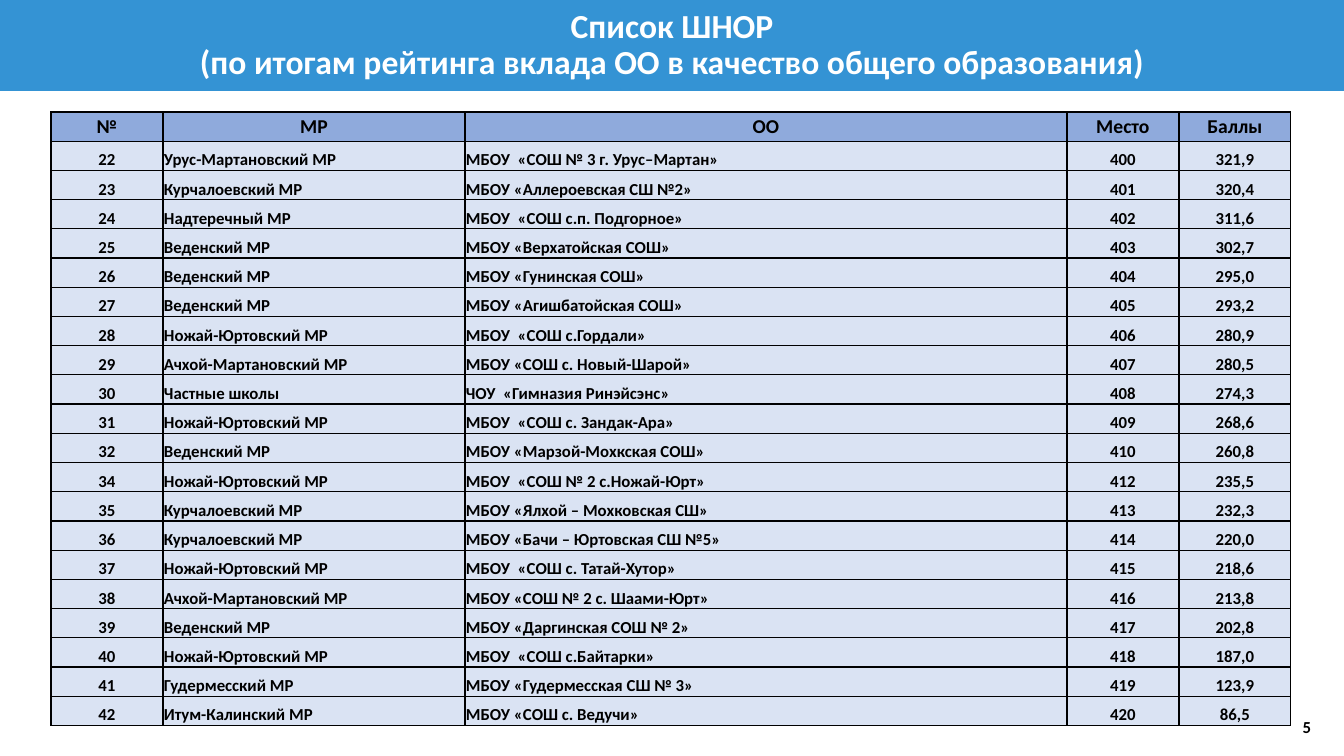
from lxml import etree
from pptx import Presentation
from pptx import util as u
from pptx.dml.color import RGBColor
from pptx.enum import shapes, text
from pptx.oxml import ns

PX = 914400 / 100.8
BANNER_BLUE = RGBColor(0x34, 0x93, 0xD4)
HEADER_BLUE = RGBColor(0x8F, 0xAA, 0xDC)
ROW_BLUE = RGBColor(0xDA, 0xE3, 0xF3)
WHITE = RGBColor(0xFF, 0xFF, 0xFF)
BLACK = RGBColor(0, 0, 0)
LEFT, CENTER, RIGHT = text.PP_ALIGN.LEFT, text.PP_ALIGN.CENTER, text.PP_ALIGN.RIGHT
MIDDLE, BOTTOM = text.MSO_ANCHOR.MIDDLE, text.MSO_ANCHOR.BOTTOM

HEADERS = ("№", "МР", "ОО", "Место", "Баллы")
COLUMN_WIDTHS = (112, 302, 602, 112, 112)
COLUMN_ALIGNS = (CENTER, LEFT, LEFT, CENTER, CENTER)
SCHOOLS = (
    ("22", "Урус-Мартановский МР", "МБОУ  «СОШ № 3 г. Урус–Мартан»", "400", "321,9"),
    ("23", "Курчалоевский МР", "МБОУ «Аллероевская СШ №2»", "401", "320,4"),
    ("24", "Надтеречный МР", "МБОУ  «СОШ с.п. Подгорное»", "402", "311,6"),
    ("25", "Веденский МР", "МБОУ «Верхатойская СОШ»", "403", "302,7"),
    ("26", "Веденский МР", "МБОУ «Гунинская СОШ»", "404", "295,0"),
    ("27", "Веденский МР", "МБОУ «Агишбатойская СОШ»", "405", "293,2"),
    ("28", "Ножай-Юртовский МР", "МБОУ  «СОШ с.Гордали»", "406", "280,9"),
    ("29", "Ачхой-Мартановский МР", "МБОУ «СОШ с. Новый-Шарой»", "407", "280,5"),
    ("30", "Частные школы", "ЧОУ  «Гимназия Ринэйсэнс»", "408", "274,3"),
    ("31", "Ножай-Юртовский МР", "МБОУ  «СОШ с. Зандак-Ара»", "409", "268,6"),
    ("32", "Веденский МР", "МБОУ «Марзой-Мохкская СОШ»", "410", "260,8"),
    ("34", "Ножай-Юртовский МР", "МБОУ  «СОШ № 2 с.Ножай-Юрт»", "412", "235,5"),
    ("35", "Курчалоевский МР", "МБОУ «Ялхой – Мохковская СШ»", "413", "232,3"),
    ("36", "Курчалоевский МР", "МБОУ «Бачи – Юртовская СШ №5»", "414", "220,0"),
    ("37", "Ножай-Юртовский МР", "МБОУ  «СОШ с. Татай-Хутор»", "415", "218,6"),
    ("38", "Ачхой-Мартановский МР", "МБОУ «СОШ № 2 с. Шаами-Юрт»", "416", "213,8"),
    ("39", "Веденский МР", "МБОУ «Даргинская СОШ № 2»", "417", "202,8"),
    ("40", "Ножай-Юртовский МР", "МБОУ  «СОШ с.Байтарки»", "418", "187,0"),
    ("41", "Гудермесский МР", "МБОУ «Гудермесская СШ № 3»", "419", "123,9"),
    ("42", "Итум-Калинский МР", "МБОУ «СОШ с. Ведучи»", "420", "86,5"),
)


def px(length):
    return u.Emu(round(length * PX))


def write(frame, words, *, font="Calibri", size=12, color=BLACK, bold=True,
          align=LEFT, spacing=None):
    """Fill the first paragraph; a vertical tab in words breaks the line."""
    paragraph = frame.paragraphs[0]
    paragraph.text = words
    paragraph.alignment = align
    paragraph.line_spacing = spacing
    for run in paragraph.runs:
        run.font.name = font
        run.font.size = u.Pt(size)
        run.font.bold = bold
        run.font.color.rgb = color


def outline_cell(cell, color, width):
    """Draw all four borders; call before the cell's fill is set."""
    properties = cell._tc.get_or_add_tcPr()
    for side in ("a:lnL", "a:lnR", "a:lnT", "a:lnB"):
        line = etree.SubElement(properties, ns.qn(side), w=str(u.Pt(width)))
        fill = etree.SubElement(line, ns.qn("a:solidFill"))
        etree.SubElement(fill, ns.qn("a:srgbClr"), val=str(color))


class SlideBuilder:
    def __init__(self, slide, font="Calibri"):
        self.slide = slide
        self.font = font

    def banner(self, words, left, top, width, height):
        banner = self.slide.shapes.add_shape(
            shapes.MSO_SHAPE.RECTANGLE, px(left), px(top), px(width), px(height))
        banner.shadow.inherit = False
        banner.fill.solid()
        banner.fill.fore_color.rgb = BANNER_BLUE
        banner.line.fill.background()
        banner.text_frame.word_wrap = True
        banner.text_frame.vertical_anchor = MIDDLE
        write(banner.text_frame, words, font=self.font, size=24, color=WHITE,
              align=CENTER, spacing=0.9)

    def label(self, words, left, top, width, height, align):
        box = self.slide.shapes.add_textbox(px(left), px(top), px(width), px(height))
        box.text_frame.word_wrap = True
        box.text_frame.vertical_anchor = MIDDLE
        write(box.text_frame, words, font=self.font, align=align)

    def ranking(self, rows, left, top, height):
        table = self.slide.shapes.add_table(
            len(rows), len(COLUMN_WIDTHS), px(left), px(top),
            px(sum(COLUMN_WIDTHS)), px(height)).table
        table.horz_banding = False
        for column, width in zip(table.columns, COLUMN_WIDTHS):
            column.width = px(width)
        for r, row in enumerate(rows):
            table.rows[r].height = px(height / len(rows))
            for c, words in enumerate(row):
                self.cell(table.cell(r, c), words, r == 0, COLUMN_ALIGNS[c])

    def cell(self, cell, words, is_header, align):
        outline_cell(cell, BLACK, 1)
        cell.fill.solid()
        cell.fill.fore_color.rgb = HEADER_BLUE if is_header else ROW_BLUE
        cell.margin_left = cell.margin_right = cell.margin_top = px(1)
        cell.margin_bottom = 0
        cell.vertical_anchor = MIDDLE if is_header else BOTTOM
        write(cell.text_frame, words, font=self.font,
              size=14 if is_header else 12, align=CENTER if is_header else align)


def main():
    deck = Presentation()
    deck.slide_width, deck.slide_height = px(1344), px(756)
    page = SlideBuilder(deck.slides.add_slide(deck.slide_layouts[6]))
    page.banner("Список ШНОР\v(по итогам рейтинга вклада ОО в качество общего образования)",
                0, 0, 1344, 91)
    page.ranking((HEADERS, *SCHOOLS), 51, 112, 614)
    page.label("5", 1019, 707, 302, 40, RIGHT)
    deck.save("out.pptx")


if __name__ == "__main__":
    main()
